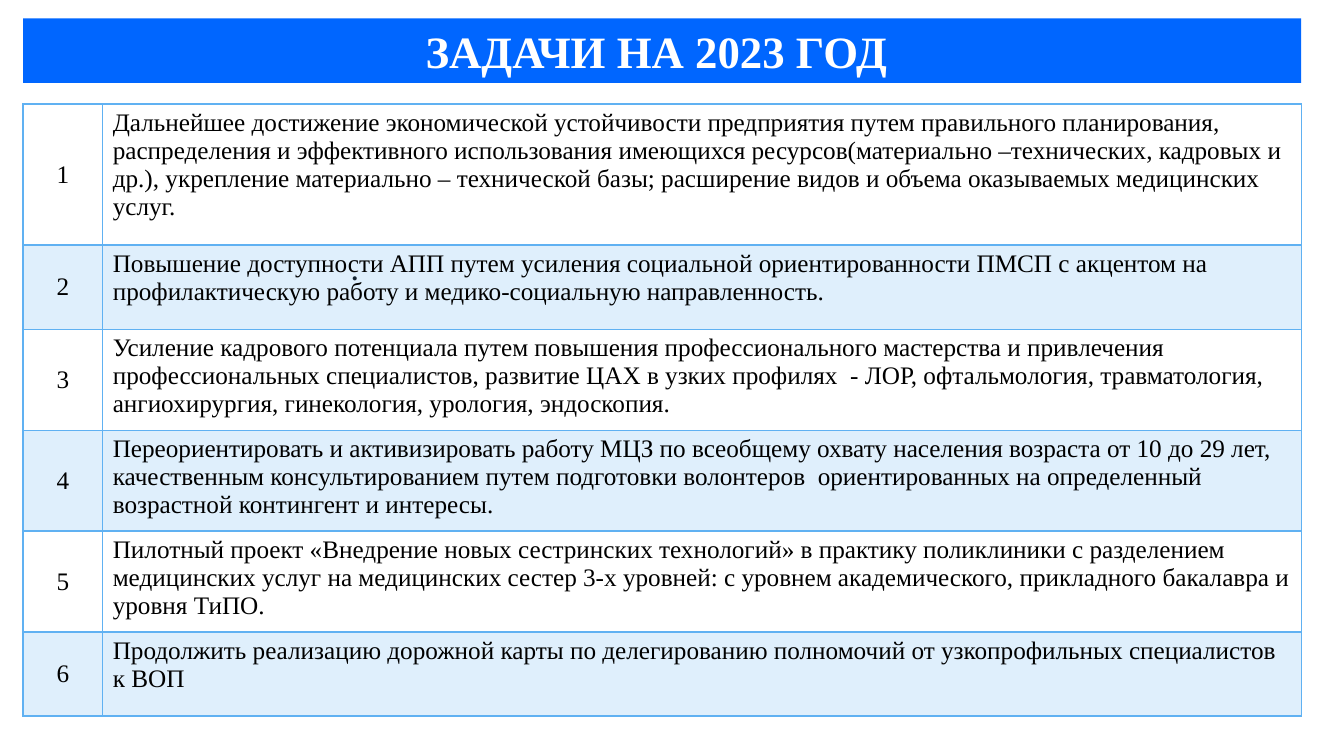
from lxml.etree import SubElement
from pptx import Presentation
from pptx.dml.color import RGBColor
from pptx.enum.text import MSO_ANCHOR as Anchor, MSO_AUTO_SIZE as AutoSize, PP_ALIGN as Align
from pptx.oxml import parse_xml
from pptx.oxml.ns import nsdecls, qn
from pptx.util import Cm, Pt

FONT = "Times New Roman"
SKY = "60B1F2"
LEFT, WIDTH = Cm(0.58), Cm(32.21)
TASKS = [
    (3.56, "Дальнейшее достижение экономической устойчивости предприятия путем правильного планирования, "
           "распределения и эффективного использования имеющихся ресурсов(материально –технических, кадровых "
           "и др.), укрепление материально – технической базы; расширение видов и объема оказываемых "
           "медицинских услуг."),
    (2.12, "Повышение доступности АПП путем усиления социальной ориентированности ПМСП с акцентом на "
           "профилактическую работу и медико-социальную направленность."),
    (2.54, "Усиление кадрового потенциала путем повышения профессионального мастерства и привлечения "
           "профессиональных специалистов, развитие ЦАХ в узких профилях  - ЛОР, офтальмология, "
           "травматология, ангиохирургия, гинекология, урология, эндоскопия."),
    (2.54, "Переориентировать и активизировать работу МЦЗ по всеобщему охвату населения возраста от 10 до "
           "29 лет, качественным консультированием путем подготовки волонтеров  ориентированных на "
           "определенный возрастной контингент и интересы."),
    (2.54, "Пилотный проект «Внедрение новых сестринских технологий» в практику поликлиники с разделением "
           "медицинских услуг на медицинских сестер 3-х уровней: с уровнем академического, прикладного "
           "бакалавра и уровня ТиПО."),
    (2.12, "Продолжить реализацию дорожной карты по делегированию полномочий от узкопрофильных "
           "специалистов к ВОП"),
]


def color(value):
    return RGBColor.from_string(value)


def write(paragraph, text, size, text_color="000000", bold=False, italic=False):
    paragraph.text = text
    font = paragraph.font
    font.name, font.size, font.bold, font.italic = FONT, Pt(size), bold, italic
    font.color.rgb = color(text_color)


presentation = Presentation()
presentation.slide_width, presentation.slide_height = Cm(33.87), Cm(19.05)
slide = presentation.slides.add_slide(presentation.slide_layouts[5])

# Title bar
title = slide.shapes.title
title.left, title.top, title.width, title.height = LEFT, Cm(0.46), WIDTH, Cm(1.63)
title.fill.solid()
title.fill.fore_color.rgb = color("0066FF")
title.text_frame.auto_size = AutoSize.NONE
title.text_frame.vertical_anchor = Anchor.MIDDLE
heading = title.text_frame.paragraphs[0]
write(heading, "ЗАДАЧИ НА 2023 ГОД ", 32, "FFFFFF", bold=True)
heading.alignment = Align.CENTER

# Dot behind the table
dot = slide.shapes.add_textbox(Cm(8.64), Cm(6.32), Cm(0.69), Cm(1.02))
dot.text_frame.word_wrap = False
write(dot.text_frame.paragraphs[0], ".", 18, bold=True, italic=True)

# Table of numbered tasks
total_height = Cm(sum(height for height, text in TASKS))
table = slide.shapes.add_table(len(TASKS), 2, LEFT, Cm(2.62), WIDTH, total_height).table
table.first_row = table.horz_banding = False
table.columns[0].width, table.columns[1].width = Cm(2.01), Cm(30.2)

for row, (height, task) in enumerate(TASKS):
    table.rows[row].height = Cm(height)
    for column, text in enumerate((str(row + 1), task)):
        cell = table.cell(row, column)
        paragraph = cell.text_frame.paragraphs[0]
        write(paragraph, text, 18)
        if column == 0:
            paragraph.alignment = Align.CENTER
            cell.vertical_anchor = Anchor.MIDDLE

        # Tint every second row
        properties = cell._tc.get_or_add_tcPr()
        if row % 2:
            cell.fill.solid()
            cell.fill.fore_color.rgb = color(SKY)
            tint = properties.find(".//" + qn("a:srgbClr"))
            SubElement(tint, qn("a:alpha"), val="20000")
        else:
            cell.fill.background()

        # Borders, with a thicker line under the first row
        for index, side in enumerate("LRTB"):
            thick = (row, side) in ((0, "B"), (1, "T"))
            properties.insert(index, parse_xml(
                f'<a:ln{side} {nsdecls("a")} w="{Pt(2 if thick else 1)}"><a:solidFill>'
                f'<a:srgbClr val="{SKY}"/></a:solidFill></a:ln{side}>'))

presentation.save("out.pptx")
